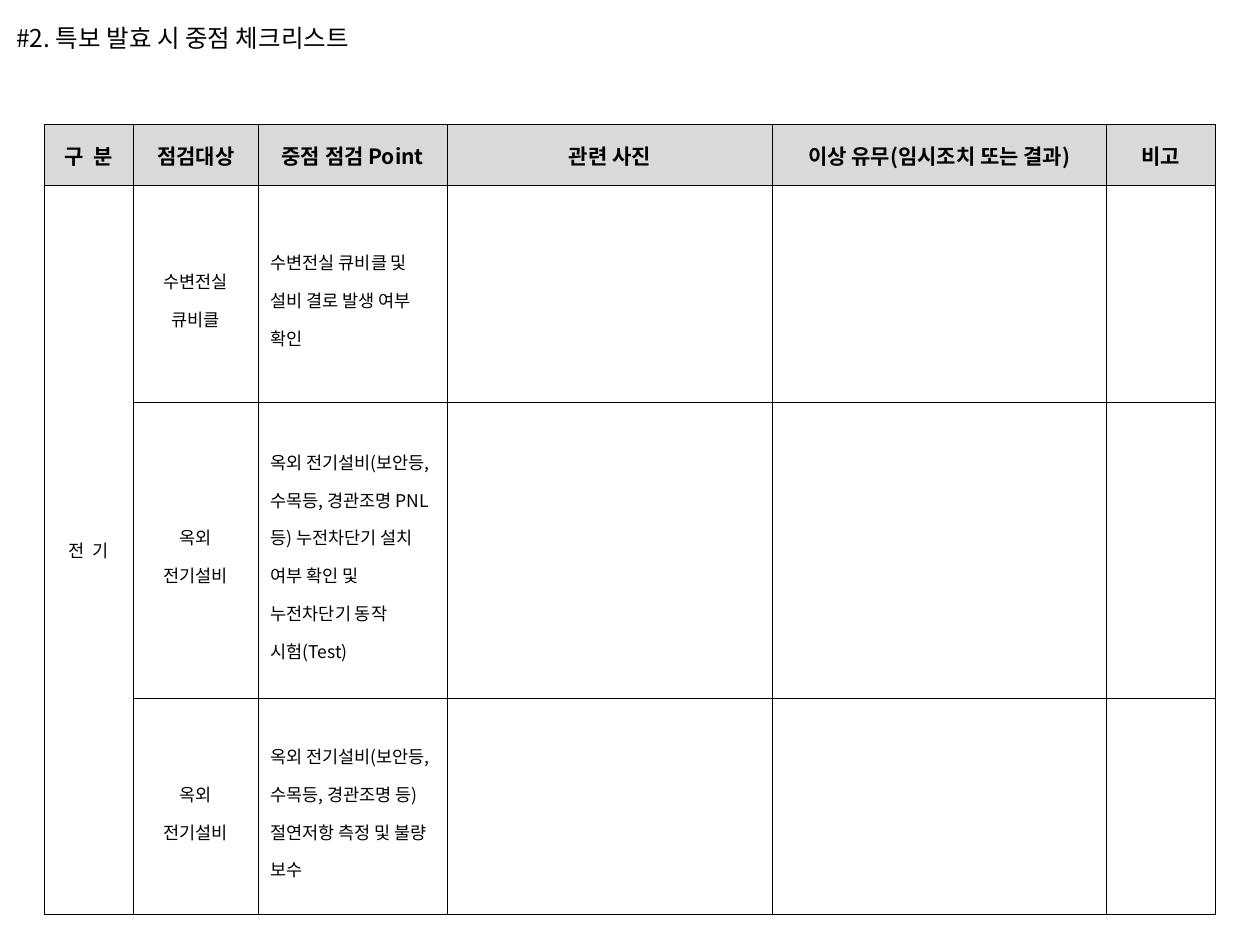
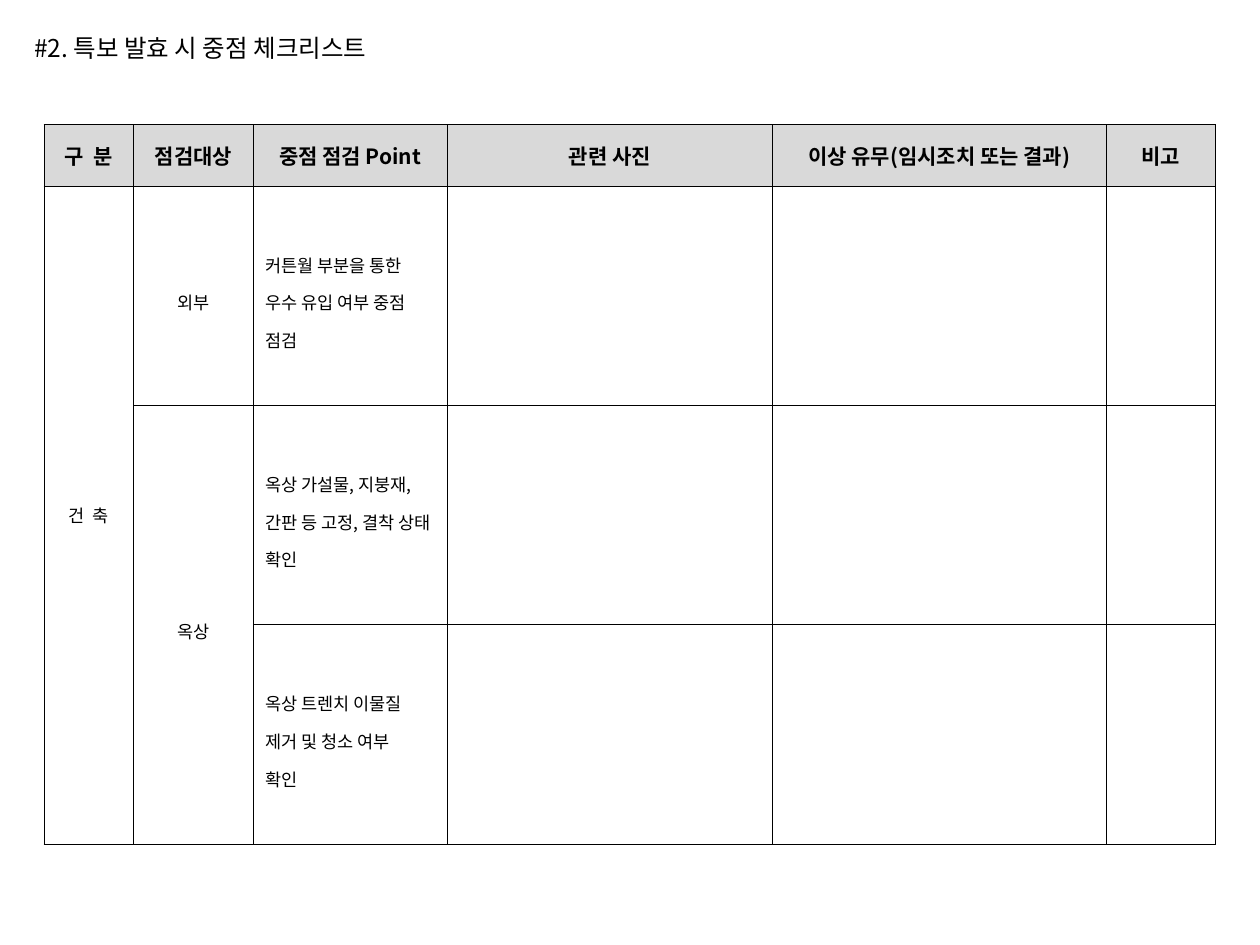
from dataclasses import dataclass

from lxml.etree import SubElement
from pptx import Presentation
from pptx.dml.color import RGBColor
from pptx.enum.text import MSO_ANCHOR as Anchor, MSO_AUTO_SIZE as AutoSize, PP_ALIGN as Align
from pptx.oxml.ns import qn
from pptx.util import Inches, Pt

WIDTH, HEIGHT = Inches(10), Inches(7.5)
FONT = "Noto Sans CJK KR"
COLORS = {"ink": "000000", "header": "D9D9D9"}
TITLE = "#2. 특보 발효 시 중점 체크리스트"
HEADINGS = ("구  분", "점검대상", "중점 점검 Point", "관련 사진", "이상 유무(임시조치 또는 결과)", "비고")
CATEGORY_SHARE, TARGET_AND_POINT_SHARE = 7.1, 24.9
BLANK_SHARES = (25.8, 26.5, 8.7)
TABLE_LEFT, TABLE_TOP = 3.5, 13.2
TITLE_WIDTH, TITLE_HEIGHT = 58.8, 4.53


@dataclass(frozen=True)
class Check:
    """One point to inspect; an empty target continues the one above."""

    target: str
    points: tuple[str, ...]
    height: float


@dataclass(frozen=True)
class Checklist:
    """One slide's category, its checks and its shares of the slide in percent."""

    category: str
    title_left: float
    title_top: float
    target_width: float
    header_height: float
    checks: tuple[Check, ...]


CHECKLISTS = (
    Checklist("전  기", 0.3, 1.73, 9.9, 6.4, (
        Check("수변전실\v큐비클", ("수변전실 큐비클 및 설비 결로 발생 여부 확인",), 22.93),
        Check("옥외\v전기설비", (
            "옥외 전기설비(보안등, 수목등, 경관조명 PNL 등) 누전차단기 설치 여부 확인 및",
            "누전차단기 동작",
            "시험(Test)",
        ), 31.33),
        Check("옥외\v전기설비", (
            "옥외 전기설비(보안등, 수목등, 경관조명 등) 절연저항 측정 및 불량 보수",
        ), 22.93),
    )),
    Checklist("건  축", 1.7, 2.8, 9.5, 6.53, (
        Check("외부", ("커튼월 부분을 통한 우수 유입 여부 중점 점검",), 23.2),
        Check("옥상", ("옥상 가설물, 지붕재, 간판 등 고정, 결착 상태 확인",), 23.2),
        Check("", ("옥상 트렌치 이물질 제거 및 청소 여부", "확인"), 23.2),
    )),
)


def across(share: float) -> int:
    """Turn a percentage of the slide's width into a length."""
    return round(WIDTH * share / 100)


def down(share: float) -> int:
    """Turn a percentage of the slide's height into a length."""
    return round(HEIGHT * share / 100)


def write(frame, lines: tuple[str, ...], size: float, align=Align.LEFT,
          bold: bool = False, spacing: float = 1.0) -> None:
    """Fill a text frame with equally formatted paragraphs."""
    frame.text = "\n".join("" for _ in lines)
    for paragraph, line in zip(frame.paragraphs, lines):
        paragraph.text = line
        paragraph.alignment = align
        paragraph.line_spacing = spacing
        font = paragraph.font
        font.size, font.bold, font.name = Pt(size), bold, FONT
        font.color.rgb = RGBColor.from_string(COLORS["ink"])
        SubElement(paragraph._p.pPr.find(qn("a:defRPr")), qn("a:ea"), typeface=FONT)


def add_borders(cell) -> None:
    """Rule all four sides of a cell."""
    properties = cell._tc.get_or_add_tcPr()
    for position, side in enumerate(("a:lnL", "a:lnR", "a:lnT", "a:lnB")):
        line = SubElement(properties, qn(side), w=str(Pt(0.5)))
        SubElement(SubElement(line, qn("a:solidFill")), qn("a:srgbClr"), val=COLORS["ink"])
        properties.insert(position, line)


def add_title(slide, checklist: Checklist) -> None:
    """Place and format the slide's title."""
    title = slide.shapes.title
    title.left, title.top = across(checklist.title_left), down(checklist.title_top)
    title.width, title.height = across(TITLE_WIDTH), down(TITLE_HEIGHT)
    frame = title.text_frame
    frame.word_wrap = True
    frame.vertical_anchor = Anchor.TOP
    frame.auto_size = AutoSize.SHAPE_TO_FIT_TEXT
    write(frame, (TITLE,), 14)


def add_grid(slide, checklist: Checklist):
    """Add the ruled table with its header fill and return it."""
    widths = (CATEGORY_SHARE, checklist.target_width,
              TARGET_AND_POINT_SHARE - checklist.target_width, *BLANK_SHARES)
    heights = (checklist.header_height, *(check.height for check in checklist.checks))
    table = slide.shapes.add_table(
        len(heights), len(widths), across(TABLE_LEFT), down(TABLE_TOP),
        across(sum(widths)), down(sum(heights))).table
    table.first_row = table.horz_banding = False
    for column, width in zip(table.columns, widths):
        column.width = across(width)
    for index, (row, height) in enumerate(zip(table.rows, heights)):
        row.height = down(height)
        for cell in row.cells:
            cell.vertical_anchor = Anchor.MIDDLE
            if index == 0:
                cell.fill.solid()
                cell.fill.fore_color.rgb = RGBColor.from_string(COLORS["header"])
            else:
                cell.fill.background()
            add_borders(cell)
    return table


def add_checks(slide, checklist: Checklist) -> None:
    """Write the headings, the category and every check."""
    table = add_grid(slide, checklist)
    for column, heading in enumerate(HEADINGS):
        write(table.cell(0, column).text_frame, (heading,), 12, Align.CENTER, bold=True)
    category = table.cell(1, 0)
    category.merge(table.cell(len(checklist.checks), 0))
    write(category.text_frame, (checklist.category,), 10, Align.CENTER)
    for row, check in enumerate(checklist.checks, start=1):
        target = table.cell(row, 1)
        if check.target:
            write(target.text_frame, (check.target,), 10, Align.CENTER, spacing=1.5)
        else:
            table.cell(row - 1, 1).merge(target)
        write(table.cell(row, 2).text_frame, check.points, 10, spacing=1.5)


def main() -> None:
    """Build one slide for each checklist."""
    deck = Presentation()
    deck.slide_width, deck.slide_height = WIDTH, HEIGHT
    title_only = deck.slide_layouts[5]
    for checklist in CHECKLISTS:
        slide = deck.slides.add_slide(title_only)
        add_title(slide, checklist)
        add_checks(slide, checklist)
    deck.save("out.pptx")


if __name__ == "__main__":
    main()
